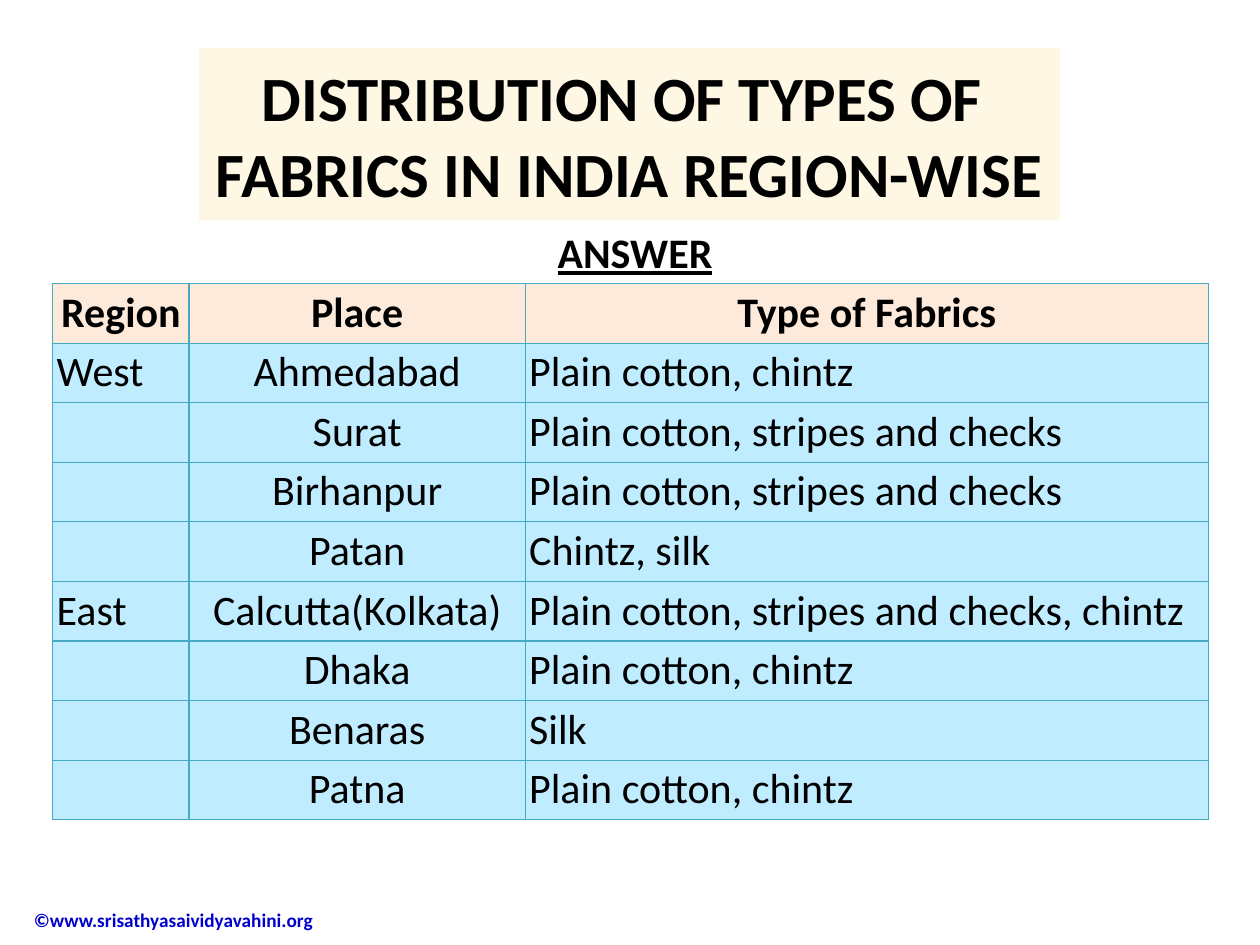
from lxml import etree
from pptx import Presentation
from pptx import util as u
from pptx.dml.color import RGBColor
from pptx.enum import shapes, text
from pptx.oxml import ns

TITLE = ["DISTRIBUTION OF TYPES OF ", "FABRICS IN INDIA REGION-WISE"]
SUBTITLE = "ANSWER"
FOOTER = "©www.srisathyasaividyavahini.org"
HEADER = ("Region", "Place", "Type of Fabrics")
REGIONS = {
    "West": [
        ("Ahmedabad", "Plain cotton, chintz"),
        ("Surat", "Plain cotton, stripes and checks"),
        ("Birhanpur", "Plain cotton, stripes and checks"),
        ("Patan", "Chintz, silk"),
    ],
    "East": [
        ("Calcutta(Kolkata)", "Plain cotton, stripes and checks, chintz"),
        ("Dhaka", "Plain cotton, chintz"),
        ("Benaras", "Silk"),
        ("Patna", "Plain cotton, chintz"),
    ],
}
COLUMNS = (1.08, 2.67, 5.42)
ROW_HEIGHT = 0.473
CELL_MARGIN = 0.03
FONT = "Calibri"
BLACK = RGBColor(0, 0, 0)
BLUE = RGBColor(0x00, 0x00, 0xCC)
CREAM = RGBColor(0xFD, 0xF7, 0xE3)
PEACH = RGBColor(0xFD, 0xEA, 0xDA)
SKY = RGBColor(0xC0, 0xEC, 0xFF)
TEAL = RGBColor(0x46, 0xAA, 0xC5)
LEFT, CENTER = text.PP_ALIGN.LEFT, text.PP_ALIGN.CENTER


def write(tf, lines, size, align=CENTER, color=BLACK, bold=True, underline=None):
    p = tf.paragraphs[0]
    p.alignment = align
    for i, line in enumerate(lines):
        if i:
            p.add_line_break()
        r = p.add_run()
        r.text = line
        f = r.font
        f.name, f.size, f.bold, f.underline = FONT, u.Pt(size), bold, underline
        f.color.rgb = color


def add_box(s, x, y, w, h, lines, size, fill=None, **style):
    sp = s.shapes.add_shape(shapes.MSO_SHAPE.RECTANGLE, *map(u.Inches, (x, y, w, h)))
    sp.shadow.inherit = False
    sp.line.fill.background()
    if fill:
        sp.fill.solid()
        sp.fill.fore_color.rgb = fill
    else:
        sp.fill.background()
    tf = sp.text_frame
    tf.word_wrap = True
    tf.vertical_anchor = text.MSO_ANCHOR.MIDDLE
    write(tf, lines, size, **style)


def set_borders(cell):
    tc_pr = cell._tc.get_or_add_tcPr()
    for i, side in enumerate(("lnL", "lnR", "lnT", "lnB")):
        ln = etree.Element(ns.qn(f"a:{side}"), w=str(u.Pt(0.75)))
        fill = etree.SubElement(ln, ns.qn("a:solidFill"))
        etree.SubElement(fill, ns.qn("a:srgbClr"), val=str(TEAL))
        tc_pr.insert(i, ln)


def add_fabric_table(s, x, y):
    rows = [HEADER] + [
        (region if i == 0 else "", *entry)
        for region, entries in REGIONS.items()
        for i, entry in enumerate(entries)
    ]
    table = s.shapes.add_table(
        len(rows), len(COLUMNS), u.Inches(x), u.Inches(y),
        u.Inches(sum(COLUMNS)), u.Inches(ROW_HEIGHT * len(rows)),
    ).table
    for col, width in zip(table.columns, COLUMNS):
        col.width = u.Inches(width)
    for i, values in enumerate(rows):
        table.rows[i].height = u.Inches(ROW_HEIGHT)
        for j, value in enumerate(values):
            cell = table.cell(i, j)
            cell.margin_left = cell.margin_right = u.Inches(CELL_MARGIN)
            cell.margin_top = cell.margin_bottom = u.Inches(CELL_MARGIN)
            cell.fill.solid()
            cell.fill.fore_color.rgb = SKY if i else PEACH
            set_borders(cell)
            if value:
                align = CENTER if i == 0 or j == 1 else LEFT
                write(cell.text_frame, [value], 24, align=align, bold=i == 0)
            else:
                cell.text_frame.paragraphs[0].font.size = u.Pt(24)


def main():
    prs = Presentation()
    prs.slide_width, prs.slide_height = u.Inches(10), u.Inches(7.5)
    s = prs.slides.add_slide(prs.slide_layouts[6])
    add_box(s, 0.17, 7.1, 2.6, 0.4, [FOOTER], 11, align=LEFT, color=BLUE)
    add_box(s, 1.58, 0.38, 6.83, 1.37, TITLE, 36, fill=CREAM)
    add_fabric_table(s, 0.42, 2.25)
    add_box(s, 4.08, 1.75, 1.92, 0.5, [SUBTITLE], 24, underline=True)
    prs.save("out.pptx")


if __name__ == "__main__":
    main()
